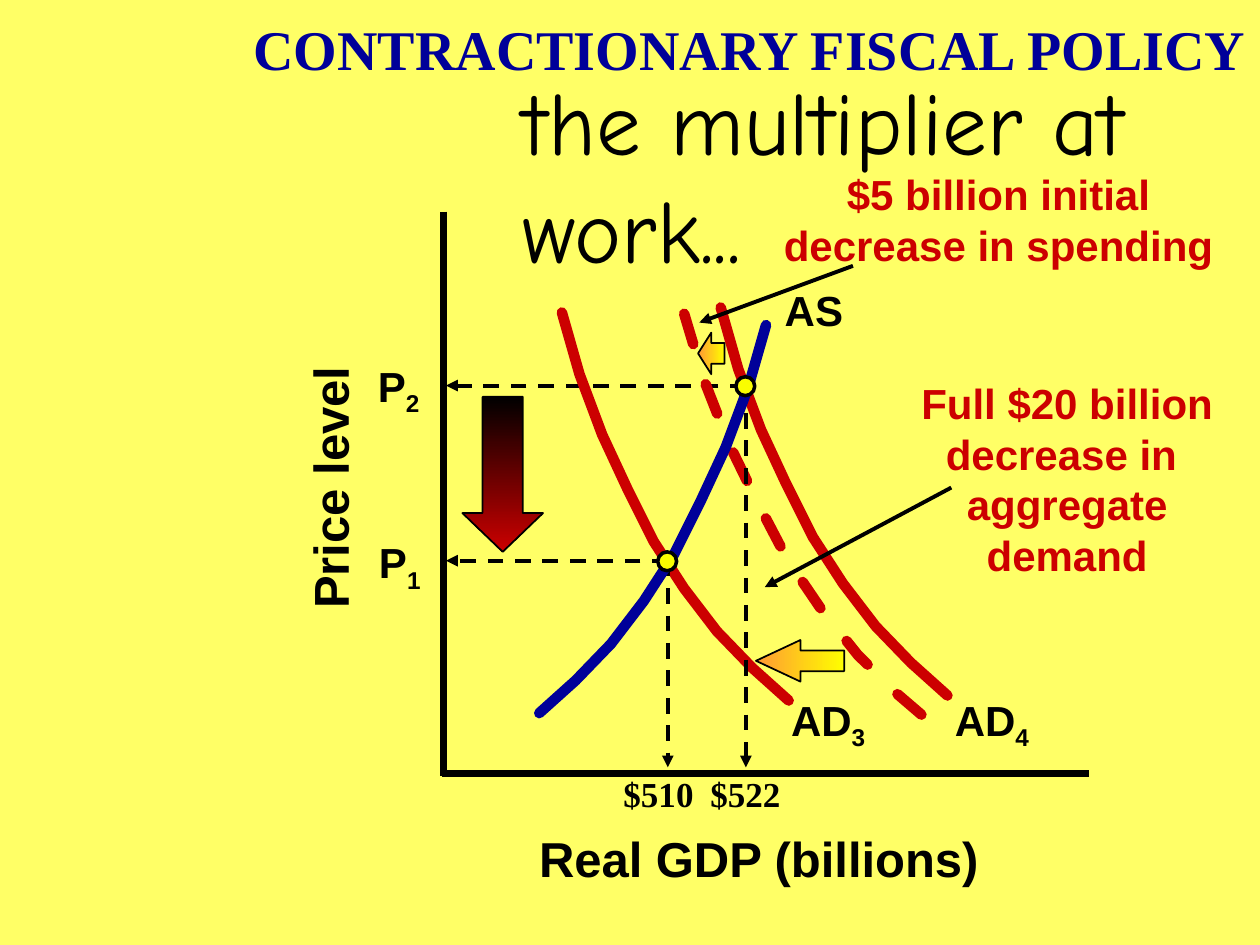
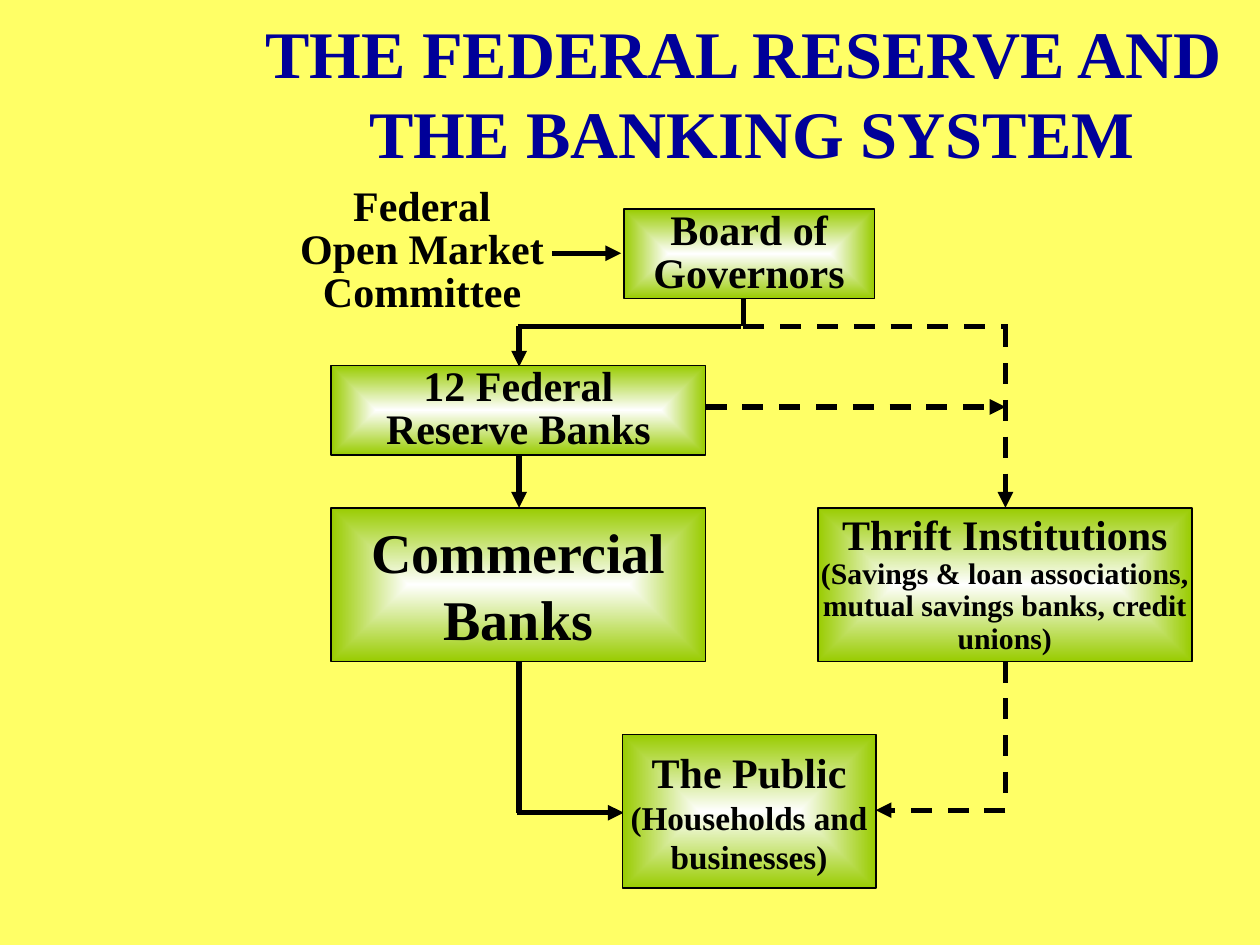
import pptx
import pptx.util
import pptx.dml.color
import pptx.enum.dml
import pptx.enum.shapes
import pptx.enum.text
import pptx.oxml
import pptx.oxml.ns
from lxml import etree

Inches, Pt = pptx.util.Inches, pptx.util.Pt
qn = pptx.oxml.ns.qn
Kind = pptx.enum.shapes.MSO_SHAPE
Fit = pptx.enum.text.MSO_AUTO_SIZE
Align = pptx.enum.text.PP_ALIGN
Anchor = pptx.enum.text.MSO_ANCHOR

PAPER, INK, NAVY, RED = "FFFF66", "000000", "000099", "CC0000"
DOT, GOLD, ORANGE, GREEN, WHITE = "FAFD00", "FFFF00", "FF9933", "99CC00", "FFFFFF"
SANS, SERIF, COMIC = "Arial", "Times New Roman", "Comic Neue"

# Falling demand curve, measured from its top left end
CURVE = [(0, 0), (.14, .49), (.32, .97), (.52, 1.4), (.73, 1.82),
         (.97, 2.19), (1.23, 2.53), (1.51, 2.82), (1.8, 3.08)]


def color(code):
    return pptx.dml.color.RGBColor.from_string(code)


def stroke(item, code, width, dash=False):
    item.line.color.rgb = color(code)
    item.line.width = Pt(width)
    if dash:
        item.line.dash_style = pptx.enum.dml.MSO_LINE.DASH
    return item._element.spPr.find(qn("a:ln"))


def blend(shape, start, end, angle=0):
    shape.fill.gradient()
    shape.fill.gradient_angle = angle
    for stop, code in zip(shape.fill.gradient_stops, (start, end)):
        stop.color.rgb = color(code)


def glow(shape, inner, outer):
    """Blend from the centre of the shape to its edges."""
    blend(shape, inner, outer)
    grad = shape._element.spPr.find(qn("a:gradFill"))
    grad.remove(grad.find(qn("a:lin")))
    way = etree.SubElement(grad, qn("a:path"), path="shape")
    etree.SubElement(way, qn("a:fillToRect"), dict.fromkeys("ltrb", "50000"))


def write(shape, text, size=24, font=SANS, ink=INK, bold=True,
          align=Align.CENTER, gap=None, small=None, wrap=False):
    """Fill in lines; small sizes all but the first, "_" starts a subscript."""
    frame = shape.text_frame
    frame.word_wrap = wrap
    for i, line in enumerate(text.split("\n")):
        para = frame.add_paragraph() if i else frame.paragraphs[0]
        para.alignment = align
        if gap:
            para.line_spacing = gap
        for j, part in enumerate(line.split("_")):
            run = para.add_run()
            run.text = part
            run.font.name, run.font.bold = font, bold
            run.font.size = Pt(small if small and i else size)
            run.font.color.rgb = color(ink)
            if j:
                run.font._element.set("baseline", "-25000")


class Area:
    """A region of a slide; all places count from its top left corner."""

    def __init__(self, slide, left, top):
        self.shapes, self.left, self.top = slide.shapes, left, top

    def spot(self, x, y):
        return Inches(self.left + x), Inches(self.top + y)

    def text(self, x, y, wide, high, words, **form):
        box = self.shapes.add_textbox(*self.spot(x, y), Inches(wide), Inches(high))
        write(box, words, **form)
        box.text_frame.auto_size = Fit.SHAPE_TO_FIT_TEXT
        return box

    def line(self, start, end, width=2.25, dash=False, arrow=False):
        link = self.shapes.add_connector(
            pptx.enum.shapes.MSO_CONNECTOR.STRAIGHT, *self.spot(*start), *self.spot(*end))
        ln = stroke(link, INK, width, dash)
        if arrow:
            etree.SubElement(ln, qn("a:tailEnd"), type="triangle")
        etree.SubElement(link._element.spPr, qn("a:effectLst"))

    def shape(self, kind, x, y, wide, high, width=1):
        item = self.shapes.add_shape(kind, *self.spot(x, y), Inches(wide), Inches(high))
        item.shadow.inherit = False
        stroke(item, INK, width)
        return item

    def curve(self, x, y, ink, wide=1, high=1, dash=False):
        """Draw CURVE scaled by wide and high; a negative wide mirrors it."""
        dots = [self.spot(x + wide * a, y + high * b) for a, b in CURVE]
        build = self.shapes.build_freeform(*dots[0], scale=1.0)
        build.add_line_segments(dots[1:], close=False)
        item = build.convert_to_shape()
        item.shadow.inherit = False
        item.fill.background()
        stroke(item, ink, 6, dash).set("cap", "rnd")


def graph(slide, left, top):
    area = Area(slide, left, top)
    points = [(1.78, 2.77), (2.4, 1.38)]
    floor = 4.46

    for x, y in points:
        area.line((x, y), (.02, y), dash=True, arrow=True)
    label = area.text(-1.97, 1.91, 2.12, .56, "Price level", size=28, align=Align.LEFT)
    label.rotation = 270
    area.text(.66, 4.85, 3.7, .56, "Real GDP (billions)", size=28, align=Align.LEFT)
    area.line((0, 0), (0, floor + .02), width=4)
    area.line((-.01, floor), (5.12, floor), width=4)

    area.curve(.94, .8, RED)
    area.curve(1.91, .81, RED, wide=1.12, high=1.07, dash=True)
    area.curve(2.2, .76, RED)
    for x, y in points:
        area.line((x, y), (x, floor - .05), dash=True, arrow=True)
    area.curve(2.56, .9, NAVY, wide=-1)

    for x, y, wide, name in [(2.66, 3.78, .8, "AD_3"), (3.96, 3.78, .8, "AD_4"),
                             (-.62, 1.13, .54, "P_2"), (-.61, 2.53, .54, "P_1"),
                             (2.61, .53, .66, "AS")]:
        area.text(x, y, wide, .5, name, align=Align.LEFT)
    for x, sum_ in [(1.33, "$510"), (2.02, "$522")]:
        area.text(x, 4.4, .9, .43, sum_, size=20, font=SERIF, align=Align.LEFT)

    area.text(2.6, -.39, 3.61, .9, "$5 billion initial\ndecrease in spending", ink=RED)
    area.text(3.6, 1.27, 2.7, 1.69,
              "Full $20 billion\ndecrease in \naggregate\ndemand", ink=RED)
    area.line((3.25, .43), (2.03, .88), arrow=True)
    area.line((4.03, 2.19), (2.55, 2.98), arrow=True)
    area.text(.53, -1.2, 5.83, .95, "the multiplier at work...", size=51,
              font=COMIC, bold=False, align=Align.LEFT, wrap=True)

    for x, y, wide, tip in [(2.48, 3.4, .7, 1.07), (2.02, .96, .21, .5)]:
        shift = area.shape(Kind.LEFT_ARROW, x, y, wide, .33)
        shift.adjustments[1] = tip
        blend(shift, ORANGE, GOLD)
    drop = area.shape(Kind.DOWN_ARROW, .15, 1.47, .64, 1.23)
    drop.adjustments[1] = .48
    blend(drop, INK, RED, angle=270)

    for x, y in points:
        dot = area.shape(Kind.OVAL, x - .08, y - .07, .15, .15, width=2)
        dot.fill.solid()
        dot.fill.fore_color.rgb = color(DOT)


def flow(slide, left, top):
    area = Area(slide, left, top)
    bank, mid, thrift = 1.49, 3.27, 5.35
    bus, base = .93, 4.79

    area.text(-.35, -.22, 2.14, 1.12, "Federal\nOpen Market\nCommittee",
              font=SERIF, gap=.85)
    for start, end, dash, arrow in [
            ((mid, .71), (mid, bus), False, False),
            ((mid - .02, bus), (bank - .01, bus), False, False),
            ((bank, bus), (bank, 1.25), False, True),
            ((bank, 1.94), (bank, 2.37), False, True),
            ((bank, 3.59), (bank, base), False, False),
            ((bank - .02, base), (2.32, base), False, True),
            ((mid, bus), (thrift + .02, bus), True, False),
            ((thrift, bus), (thrift, 2.37), True, True),
            ((2.97, 1.57), (thrift, 1.57), True, True),
            ((thrift, 3.59), (thrift, base - .05), True, False),
            ((thrift, base - .02), (4.32, base - .02), True, True),
            ((1.75, .35), (2.3, .35), False, True)]:
        area.line(start, end, width=3, dash=dash, arrow=arrow)

    for x, y, wide, high, words, form in [
            (2.32, 0, 1.99, .71, "Board of\nGovernors", dict(gap=.85)),
            (0, 1.24, 2.97, .71, "12 Federal\nReserve Banks", dict(gap=.85)),
            (0, 2.37, 2.97, 1.22, "Commercial\nBanks", dict(size=32)),
            (3.86, 2.37, 2.97, 1.22,
             "Thrift Institutions\n(Savings & loan associations,\n"
             "mutual savings banks, credit\nunions)", dict(gap=.9, small=17)),
            (2.31, 4.17, 2.01, 1.22, "The Public\n(Households and\nbusinesses)",
             dict(small=19))]:
        card = area.shape(Kind.RECTANGLE, x, y, wide, high)
        glow(card, WHITE, GREEN)
        card.text_frame.vertical_anchor = Anchor.MIDDLE
        write(card, words, font=SERIF, **form)


def page(deck, box, title, size):
    """Add a slide with the shared background and title style."""
    slide = deck.slides.add_slide(deck.slide_layouts[6])
    slide.background.fill.solid()
    slide.background.fill.fore_color.rgb = color(PAPER)
    Area(slide, 0, 0).text(*box, title, size=size, font=SERIF, ink=NAVY)
    return slide


def main():
    deck = pptx.Presentation()
    deck.slide_width, deck.slide_height = Inches(10), Inches(7.5)
    graph(page(deck, (1.89, .07, 8.12, .63), "CONTRACTIONARY FISCAL POLICY", 32),
          3.52, 1.68)
    flow(page(deck, (1.97, .05, 8, 1.36),
              "THE FEDERAL RESERVE AND \nTHE BANKING SYSTEM", 38), 2.63, 1.66)
    deck.save("out.pptx")


if __name__ == "__main__":
    main()
